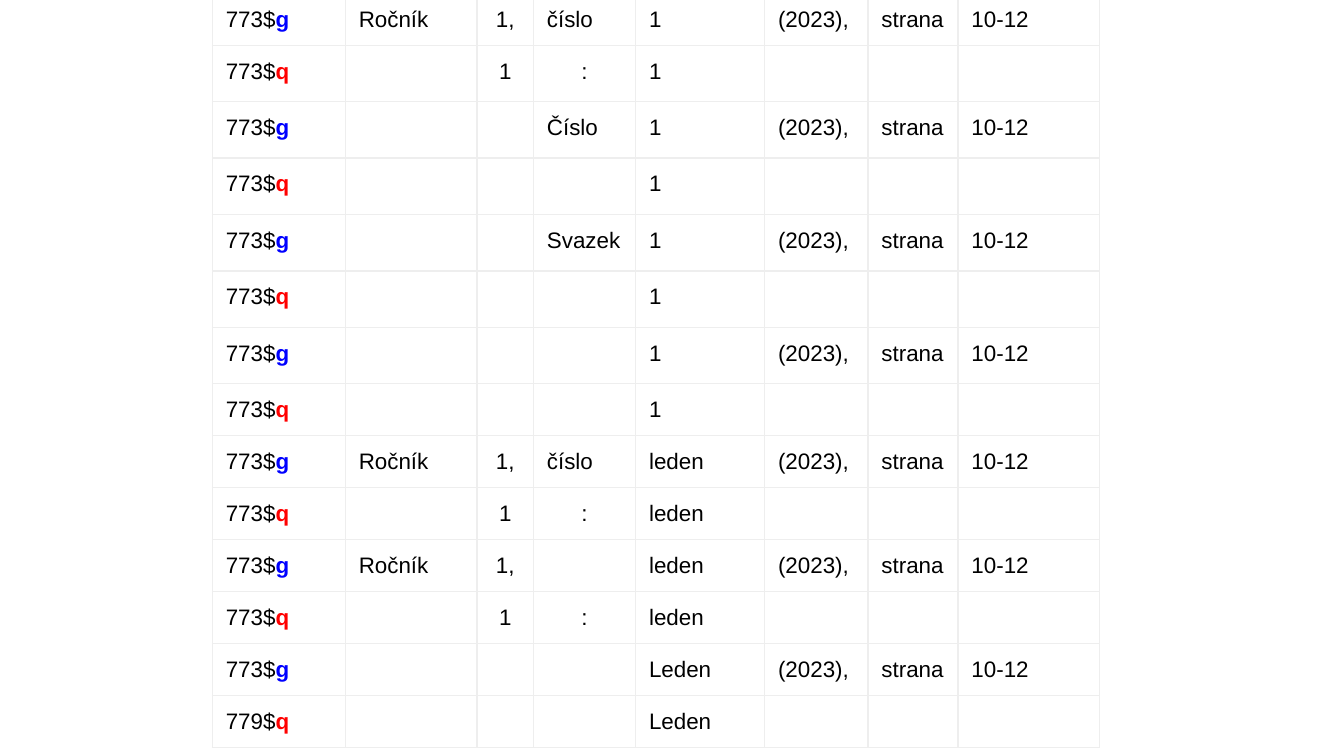
import pptx
import pptx.dml.color
import pptx.enum.text
import pptx.oxml.ns
import pptx.util
from lxml import etree
from pptx.util import Inches, Pt

PAGES = ["(2023),", "strana", "10-12"]
BLANK = [""] * 3

# Field, subfield code, then the parts of the citation
ROWS = [
    ["773$", "g", "Ročník", "1,", "číslo", "1", *PAGES],
    ["773$", "q", "", "1", ":", "1", *BLANK],
    ["773$", "g", "", "", "Číslo", "1", *PAGES],
    ["773$", "q", "", "", "", "1", *BLANK],
    ["773$", "g", "", "", "Svazek", "1", *PAGES],
    ["773$", "q", "", "", "", "1", *BLANK],
    ["773$", "g", "", "", "", "1", *PAGES],
    ["773$", "q", "", "", "", "1", *BLANK],
    ["773$", "g", "Ročník", "1,", "číslo", "leden", *PAGES],
    ["773$", "q", "", "1", ":", "leden", *BLANK],
    ["773$", "g", "Ročník", "1,", "", "leden", *PAGES],
    ["773$", "q", "", "1", ":", "leden", *BLANK],
    ["773$", "g", "", "", "", "Leden", *PAGES],
    ["779$", "q", "", "", "", "Leden", *BLANK],
]
CODE_COLORS = {"g": "0000FF", "q": "FF0000"}
COLUMN_WIDTHS = [0.99, 0.98, 0.42, 0.76, 0.96, 0.77, 0.67, 1.05]
NORMAL_HEIGHT, TALL_HEIGHT = 0.38, 0.42
TALL_ROWS = range(1, 7)
VOLUME_COLUMN = 2
FONT_NAME, FONT_SIZE = "Arial", 12
BORDER_COLOR, BORDER_WIDTH = "EEEEEE", 0.75


def color(hex_value):
    return pptx.dml.color.RGBColor.from_string(hex_value)


def add_span(para, text, hex_value="000000", bold=False):
    span = para.add_run()
    span.text = text
    span.font.name = FONT_NAME
    span.font.size = Pt(FONT_SIZE)
    span.font.bold = bold
    span.font.color.rgb = color(hex_value)


def set_borders(cell):
    properties = cell._tc.get_or_add_tcPr()
    for position, side in enumerate(("lnL", "lnR", "lnT", "lnB")):
        line = etree.Element(pptx.oxml.ns.qn(f"a:{side}"), w=str(Pt(BORDER_WIDTH)))
        fill = etree.SubElement(line, pptx.oxml.ns.qn("a:solidFill"))
        etree.SubElement(fill, pptx.oxml.ns.qn("a:srgbClr"), val=BORDER_COLOR)
        properties.insert(position, line)


def format_cell(cell):
    cell.margin_left = cell.margin_right = Inches(0.1)
    cell.margin_top = cell.margin_bottom = Inches(0.1)
    cell.fill.background()
    set_borders(cell)


def set_empty_font(para):
    """Keep an empty cell from stretching its row."""
    end = etree.SubElement(para._p, pptx.oxml.ns.qn("a:endParaRPr"),
                           sz=str(FONT_SIZE * 100))
    etree.SubElement(end, pptx.oxml.ns.qn("a:latin"), typeface=FONT_NAME)


def add_citation_table(page):
    heights = [TALL_HEIGHT if index in TALL_ROWS else NORMAL_HEIGHT
               for index in range(len(ROWS))]
    table = page.shapes.add_table(
        len(ROWS), len(COLUMN_WIDTHS), Inches(1.58), Inches(-0.05),
        Inches(sum(COLUMN_WIDTHS)), Inches(sum(heights))).table
    table.first_row = False
    table.horz_banding = False
    for column, width in zip(table.columns, COLUMN_WIDTHS):
        column.width = Inches(width)

    for row, height, (field, code, *parts) in zip(table.rows, heights, ROWS):
        row.height = Inches(height)
        for index, (cell, text) in enumerate(zip(row.cells, [field, *parts])):
            format_cell(cell)
            para = cell.text_frame.paragraphs[0]
            if not text:
                set_empty_font(para)
                continue
            add_span(para, text)
            if index == 0:
                add_span(para, code, CODE_COLORS[code], bold=True)
            if index == VOLUME_COLUMN or text == ":":
                para.alignment = pptx.enum.text.PP_ALIGN.CENTER


def main():
    deck = pptx.Presentation()
    deck.slide_width = Inches(10)
    deck.slide_height = deck.slide_width * 9 // 16
    page = deck.slides.add_slide(deck.slide_layouts[6])
    add_citation_table(page)
    deck.save("out.pptx")


if __name__ == "__main__":
    main()
